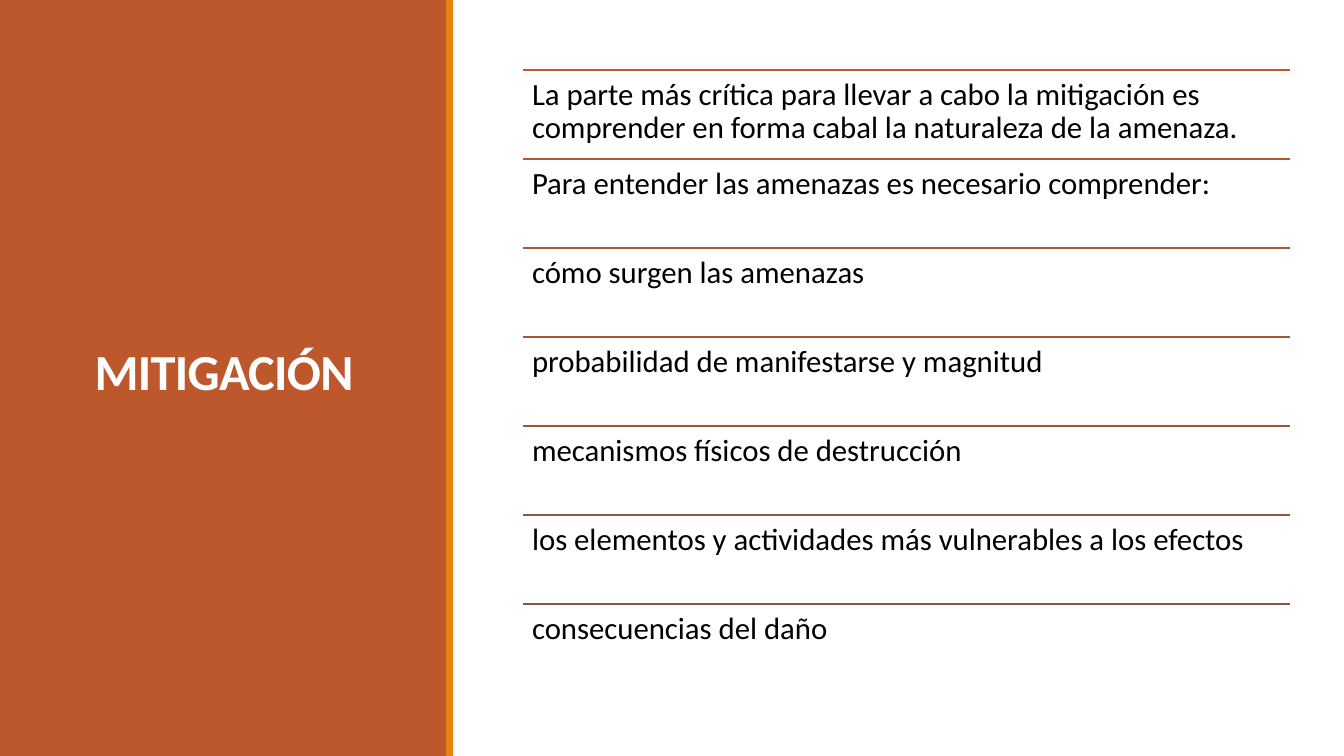
"""Builds the slide about mitigation: a title panel and a ruled list."""
from dataclasses import dataclass

from lxml import etree
from pptx import Presentation
from pptx import util as u
from pptx.dml.color import RGBColor
from pptx.enum import shapes, text
from pptx.oxml import ns

EMU_PER_INCH, PX_PER_INCH = 914400, 100.8
PAGE_WIDTH, PAGE_HEIGHT = 1344, 756
LIST_LEFT, LIST_TOP, LIST_WIDTH, ROW_HEIGHT = 523, 70, 767, 89


@dataclass(frozen=True)
class Theme:
    """Colours and type sizes of the slide."""
    font: str = "Calibri"
    panel: str = "BD582C"
    accent: str = "E48312"
    title: str = "FFFFFF"
    body: str = "000000"
    title_size: int = 36
    body_size: int = 22
    rule_width: float = 1.25


THEME = Theme()

ROWS = [
    ("BD582C", "La parte más crítica para llevar a cabo la mitigación es "
               "comprender en forma cabal la naturaleza de la amenaza."),
    ("B35830", "Para entender las amenazas es necesario comprender:"),
    ("AA5834", "cómo surgen las amenazas"),
    ("A05837", "probabilidad de manifestarse y magnitud"),
    ("97573A", "mecanismos físicos de destrucción"),
    ("8F573D", "los elementos y actividades más vulnerables a los efectos"),
    ("865640", "consecuencias del daño"),
]


def px(length):
    """Turn pixels into EMU."""
    return u.Emu(round(length * EMU_PER_INCH / PX_PER_INCH))


def add_band(page, left, width, color):
    """Add a full-height vertical band."""
    band = page.shapes.add_shape(shapes.MSO_SHAPE.RECTANGLE, px(left), 0,
                                 px(width), px(PAGE_HEIGHT))
    band.shadow.inherit = False
    band.fill.solid()
    band.fill.fore_color.rgb = RGBColor.from_string(color)
    band.line.fill.background()


def add_rule(page, top, color):
    """Add a horizontal rule across the list."""
    rule = page.shapes.add_connector(shapes.MSO_CONNECTOR.STRAIGHT, px(LIST_LEFT), px(top),
                                     px(LIST_LEFT + LIST_WIDTH), px(top))
    rule.line.color.rgb = RGBColor.from_string(color)
    rule.line.width = u.Pt(THEME.rule_width)
    etree.SubElement(rule._element.spPr, ns.qn("a:effectLst"))


def add_text(page, left, top, width, height, words, size, color, spacing):
    """Add a wrapped text box and return it with its paragraph."""
    box = page.shapes.add_textbox(px(left), px(top), px(width), px(height))
    frame = box.text_frame
    frame.word_wrap = True
    frame.margin_left = frame.margin_right = px(9)
    frame.margin_top = frame.margin_bottom = px(9)
    para = frame.paragraphs[0]
    para.text = words
    para.line_spacing = spacing
    para.font.name = THEME.font
    para.font.size = u.Pt(size)
    para.font.color.rgb = RGBColor.from_string(color)
    return box, para


def add_title(page, words):
    """Add the centred bold title on the panel."""
    box, para = add_text(page, 54, 57, 340, 636, words,
                         THEME.title_size, THEME.title, 0.85)
    box.text_frame.vertical_anchor = text.MSO_ANCHOR.MIDDLE
    para.alignment = text.PP_ALIGN.CENTER
    para.font.bold = True
    para.runs[0]._r.get_or_add_rPr().set("spc", "-50")


def main():
    """Build and save the deck."""
    deck = Presentation()
    deck.slide_width, deck.slide_height = px(PAGE_WIDTH), px(PAGE_HEIGHT)
    page = deck.slides.add_slide(deck.slide_layouts[6])
    add_band(page, 0, 446, THEME.panel)
    add_title(page, "MITIGACIÓN")
    add_band(page, 446, 7, THEME.accent)
    for index, (color, words) in enumerate(ROWS):
        top = LIST_TOP + index * ROW_HEIGHT
        add_rule(page, top, color)
        add_text(page, LIST_LEFT, top, LIST_WIDTH, ROW_HEIGHT, words,
                 THEME.body_size, THEME.body, 0.9)
    deck.save("out.pptx")


if __name__ == "__main__":
    main()
